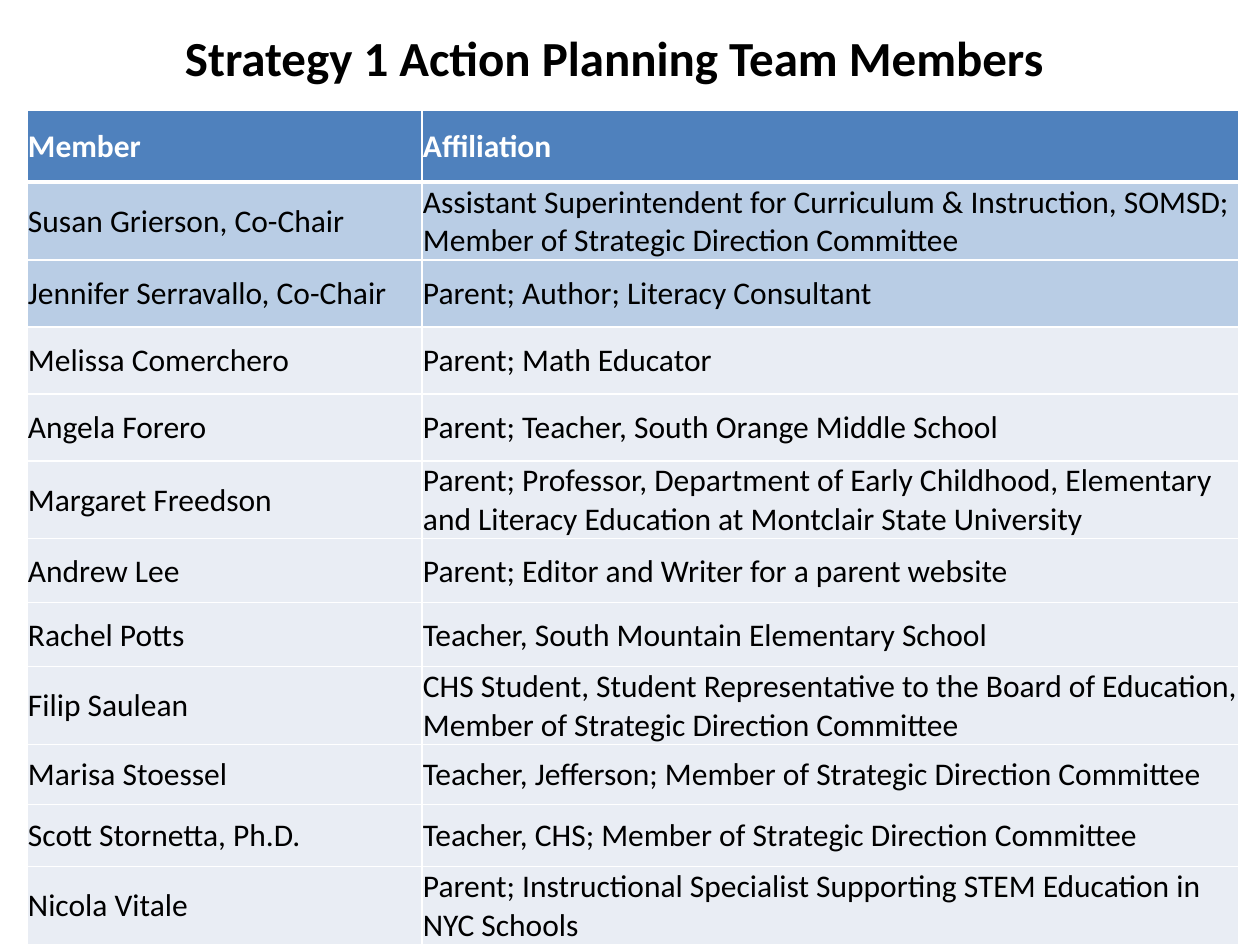
from dataclasses import dataclass

from lxml import etree
from pptx import Presentation
from pptx.dml.color import RGBColor
from pptx.enum.text import MSO_ANCHOR, PP_ALIGN
from pptx.oxml.ns import qn
from pptx.util import Pt

PX_PER_INCH = 126
EMU_PER_PX = 914400 / PX_PER_INCH
MIDDLE = MSO_ANCHOR.MIDDLE
LEFT, CENTER = PP_ALIGN.LEFT, PP_ALIGN.CENTER

FONT = "Calibri"
BLACK, WHITE = "000000", "FFFFFF"
HEADER, CHAIR, MEMBER = "4F81BD", "B9CDE5", "E9EDF4"
COLUMN_WIDTHS = (395, 817)


@dataclass
class Row:
    name: str
    affiliation: str
    height: int
    fill: str = MEMBER


ROWS = [
    Row("Member", "Affiliation", 72, HEADER),
    Row("Susan Grierson, Co-Chair",
        "Assistant Superintendent for Curriculum & Instruction, SOMSD; "
        "Member of Strategic Direction Committee", 72, CHAIR),
    Row("Jennifer Serravallo, Co-Chair", "Parent; Author; Literacy Consultant", 67, CHAIR),
    Row("Melissa Comerchero", "Parent; Math Educator", 67),
    Row("Angela Forero", "Parent; Teacher, South Orange Middle School", 67),
    Row("Margaret Freedson",
        "Parent; Professor, Department of Early Childhood, Elementary "
        "and Literacy Education at Montclair State University", 67),
    Row("Andrew Lee", "Parent; Editor and Writer for a parent website", 64),
    Row("Rachel Potts", "Teacher, South Mountain Elementary School", 64),
    Row("Filip Saulean",
        "CHS Student, Student Representative to the Board of Education, "
        "Member of Strategic Direction Committee", 64),
    Row("Marisa Stoessel", "Teacher, Jefferson; Member of Strategic Direction Committee", 60),
    Row("Scott Stornetta, Ph.D.", "Teacher, CHS; Member of Strategic Direction Committee", 62),
    Row("Nicola Vitale",
        "Parent; Instructional Specialist Supporting STEM Education in NYC Schools", 60),
]


def px(n: int) -> int:
    return round(n * EMU_PER_PX)


def rgb(color: str) -> RGBColor:
    return RGBColor.from_string(color)


def write(tf, text: str, *, size: int, color: str = BLACK, bold: bool = False, align=LEFT) -> None:
    tf.word_wrap = True
    p = tf.paragraphs[0]
    p.alignment = align
    r = p.add_run()
    r.text = text
    r.font.name = FONT
    r.font.size = Pt(size)
    r.font.bold = bold
    r.font.color.rgb = rgb(color)


def set_borders(cell, top: int, bottom: int) -> None:
    """Draw white cell borders, 1 pt at the sides; must run before the fill is set."""
    tc_pr = cell._tc.get_or_add_tcPr()
    for side, width in (("L", 1), ("R", 1), ("T", top), ("B", bottom)):
        ln = etree.SubElement(tc_pr, qn(f"a:ln{side}"), w=str(Pt(width)))
        fill = etree.SubElement(ln, qn("a:solidFill"))
        etree.SubElement(fill, qn("a:srgbClr"), val=WHITE)


def add_title(slide, text: str) -> None:
    box = slide.shapes.add_textbox(px(94), px(21), px(1040), px(72))
    write(box.text_frame, text, size=28, bold=True, align=CENTER)


def add_member_table(slide, rows: list[Row]) -> None:
    frame = slide.shapes.add_table(
        len(rows), len(COLUMN_WIDTHS), px(27), px(110),
        px(sum(COLUMN_WIDTHS)), px(sum(row.height for row in rows)))
    table = frame.table
    table.horz_banding = False
    for column, width in zip(table.columns, COLUMN_WIDTHS):
        column.width = px(width)
    for i, row in enumerate(rows):
        table.rows[i].height = px(row.height)
        header = i == 0
        for j, text in enumerate((row.name, row.affiliation)):
            cell = table.cell(i, j)
            set_borders(cell, top=3 if i == 1 else 1, bottom=3 if header else 1)
            cell.fill.solid()
            cell.fill.fore_color.rgb = rgb(row.fill)
            cell.vertical_anchor = MIDDLE
            cell.margin_left = cell.margin_top = cell.margin_right = px(1)
            cell.margin_bottom = 0
            write(cell.text_frame, text, size=18, bold=header, color=WHITE if header else BLACK)


def main() -> None:
    prs = Presentation()
    prs.slide_width, prs.slide_height = px(1260), px(945)
    slide = prs.slides.add_slide(prs.slide_layouts[6])
    add_member_table(slide, ROWS)
    add_title(slide, "Strategy 1 Action Planning Team Members")
    prs.save("out.pptx")


if __name__ == "__main__":
    main()
